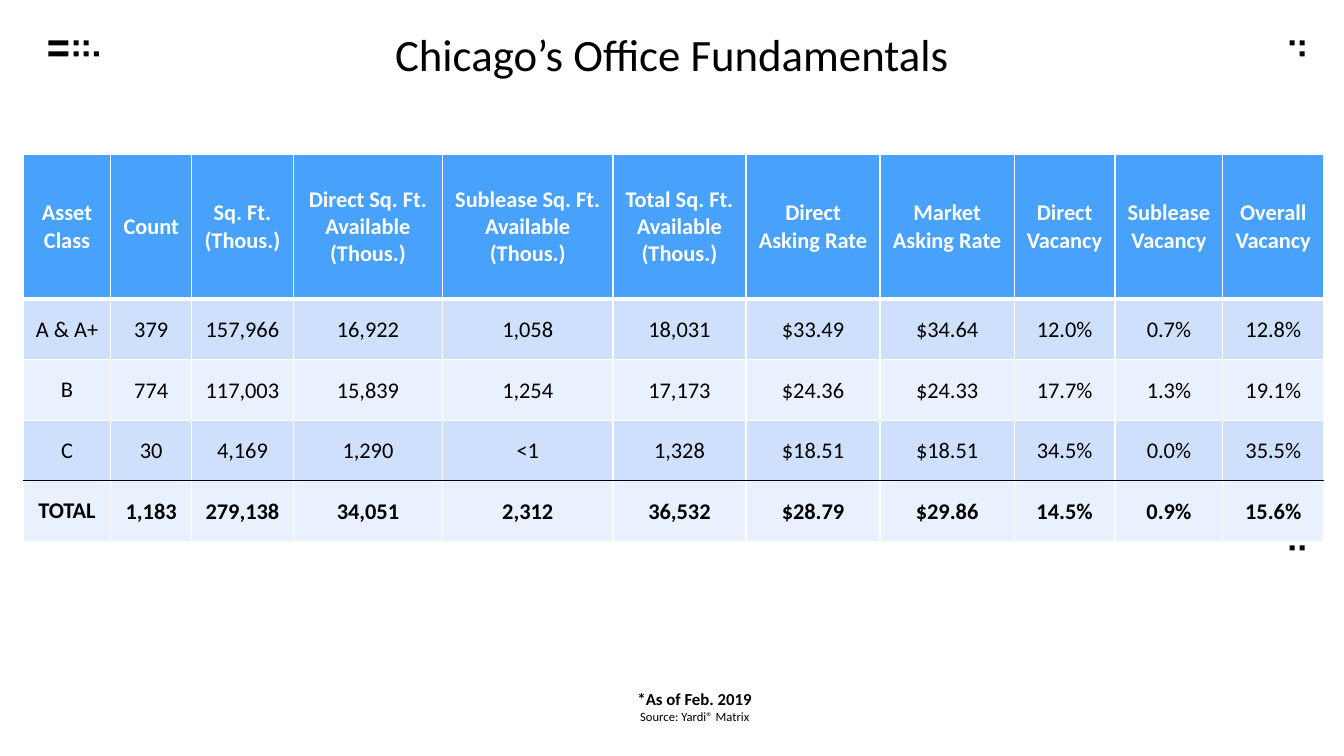
from lxml import etree
from pptx import Presentation, util as u
from pptx.dml.color import RGBColor
from pptx.enum import shapes, text
from pptx.oxml import ns

TITLE = "Chicago’s Office Fundamentals"
NOTES = [("*As of Feb. 2019", {"size": 12, "bold": True}),
         ("Source: Yardi® Matrix", {"size": 9, "bold": False})]
HEADER = ["Asset\nClass", "Count", "Sq. Ft.\n(Thous.)",
          "Direct Sq. Ft.\nAvailable\n(Thous.)",
          "Sublease Sq. Ft.\nAvailable\n(Thous.)",
          "Total Sq. Ft.\nAvailable\n(Thous.)",
          "Direct\nAsking Rate", "Market\nAsking Rate",
          "Direct\nVacancy", "Sublease\nVacancy", "Overall\nVacancy"]
ROWS = [
    HEADER,
    ["A & A+", "379", "157,966", "16,922", "1,058", "18,031",
     "$33.49", "$34.64", "12.0%", "0.7%", "12.8%"],
    ["B", "774", "117,003", "15,839", "1,254", "17,173",
     "$24.36", "$24.33", "17.7%", "1.3%", "19.1%"],
    ["C", "30", "4,169", "1,290", "<1", "1,328",
     "$18.51", "$18.51", "34.5%", "0.0%", "35.5%"],
    ["TOTAL", "1,183", "279,138", "34,051", "2,312", "36,532",
     "$28.79", "$29.86", "14.5%", "0.9%", "15.6%"],
]
COLORS = {"header": "48A1FA", "odd": "CFE0FD", "even": "E9F0FE",
          "white": "FFFFFF", "black": "000000"}
FONT = "Calibri"

SLIDE_WIDTH, SLIDE_HEIGHT = 13.33, 7.5
TABLE_LEFT, TABLE_TOP = 0.23, 1.53
COLUMN_WIDTHS = [0.87, 0.8, 1.01, 1.48, 1.69, 1.32, 1.33, 1.33, 1, 1.07, 1]
ROW_HEIGHTS = [1.44] + [0.6] * (len(ROWS) - 1)
LAST = len(ROWS) - 1
TIGHT_MARGINS = {"margin_left": 0.01, "margin_right": 0.01,
                 "margin_top": 0.01, "margin_bottom": 0}

# Corner marks: top of each row -> (left, width) of its marks
DOT = 0.05
BAR = (0.48, 0.2)
LEFT_DOTS = [(0.73 + 0.1 * step, DOT) for step in range(3)]
RIGHT_DOTS = [(12.79 + 0.1 * step, DOT) for step in range(2)]
MARKS = {0.4: [BAR] + LEFT_DOTS[:2] + RIGHT_DOTS,
         0.51: [BAR] + LEFT_DOTS + RIGHT_DOTS[1:],
         5.41: RIGHT_DOTS}


def rgb(name):
    return RGBColor.from_string(COLORS[name])


def write(frame, lines):
    """Fill a text frame with centred paragraphs of (text, font values)."""
    for index, (words, values) in enumerate(lines):
        paragraph = frame.add_paragraph() if index else frame.paragraphs[0]
        paragraph.alignment = text.PP_ALIGN.CENTER
        run = paragraph.add_run()
        run.text = words
        run.font.name = FONT
        run.font.size = u.Pt(values["size"])
        run.font.bold = values["bold"]
        run.font.color.rgb = rgb(values.get("color", "black"))


def add_text(slide, box, lines, margin=None):
    frame = slide.shapes.add_textbox(*map(u.Inches, box)).text_frame
    frame.word_wrap = True
    if margin is not None:
        for side in ("left", "right", "top", "bottom"):
            setattr(frame, f"margin_{side}", u.Inches(margin))
    write(frame, lines)


def set_borders(cell, row):
    """White rules; thick under the header and black above the total."""
    top = {1: ("white", 3), LAST: ("black", 1)}
    bottom = {0: ("white", 3), LAST - 1: ("black", 1)}
    thin = ("white", 1)
    edges = {"lnL": thin, "lnR": thin,
             "lnT": top.get(row, thin), "lnB": bottom.get(row, thin)}
    properties = cell._tc.get_or_add_tcPr()
    for tag, (color, points) in edges.items():
        line = etree.SubElement(properties, ns.qn(f"a:{tag}"),
                                w=str(u.Pt(points)))
        fill = etree.SubElement(line, ns.qn("a:solidFill"))
        etree.SubElement(fill, ns.qn("a:srgbClr"), val=COLORS[color])


def add_marks(slide):
    for top, row in MARKS.items():
        for left, width in row:
            mark = slide.shapes.add_shape(
                shapes.MSO_SHAPE.RECTANGLE,
                *map(u.Inches, (left, top, width, DOT)))
            mark.shadow.inherit = False
            mark.fill.solid()
            mark.fill.fore_color.rgb = rgb("black")
            mark.line.fill.background()


def add_fundamentals(slide):
    box = TABLE_LEFT, TABLE_TOP, sum(COLUMN_WIDTHS), sum(ROW_HEIGHTS)
    table = slide.shapes.add_table(
        len(ROWS), len(HEADER), *map(u.Inches, box)).table
    for column, width in zip(table.columns, COLUMN_WIDTHS):
        column.width = u.Inches(width)
    for row, (values, height) in enumerate(zip(ROWS, ROW_HEIGHTS)):
        table.rows[row].height = u.Inches(height)
        fill = "header" if row == 0 else "odd" if row % 2 else "even"
        style = {"size": 16, "bold": row in (0, LAST),
                 "color": "black" if row else "white"}
        for column, value in enumerate(values):
            cell = table.cell(row, column)
            cell.vertical_anchor = text.MSO_ANCHOR.MIDDLE
            if row and column:
                for name, margin in TIGHT_MARGINS.items():
                    setattr(cell, name, u.Inches(margin))
            set_borders(cell, row)
            cell.fill.solid()
            cell.fill.fore_color.rgb = rgb(fill)
            write(cell.text_frame, [(line, style) for line in value.split("\n")])


def main():
    presentation = Presentation()
    presentation.slide_width = u.Inches(SLIDE_WIDTH)
    presentation.slide_height = u.Inches(SLIDE_HEIGHT)
    slide = presentation.slides.add_slide(presentation.slide_layouts[6])
    add_marks(slide)
    add_text(slide, (2.1, 6.78, 9.58, 0.45), NOTES)
    add_text(slide, (0, 0.27, SLIDE_WIDTH, 0.54),
             [(TITLE, {"size": 32, "bold": False})], margin=0)
    add_fundamentals(slide)
    presentation.save("out.pptx")


if __name__ == "__main__":
    main()
